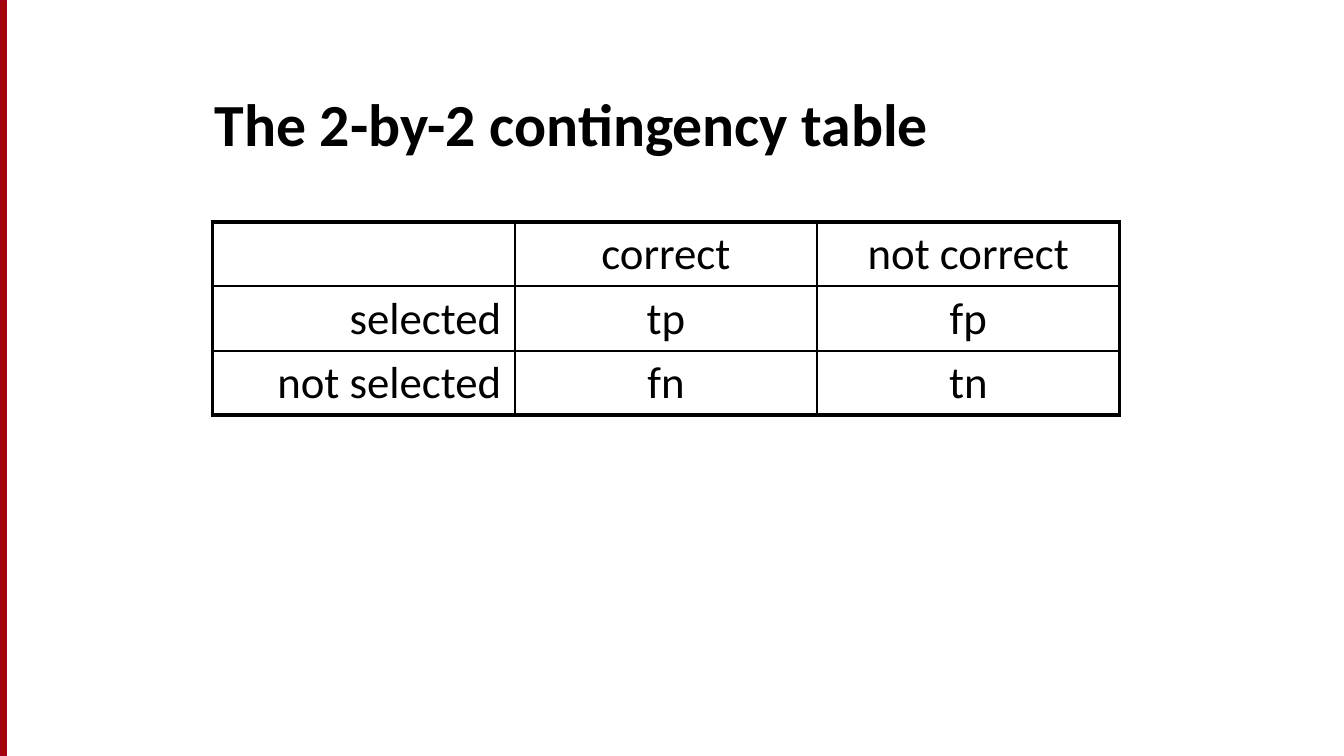
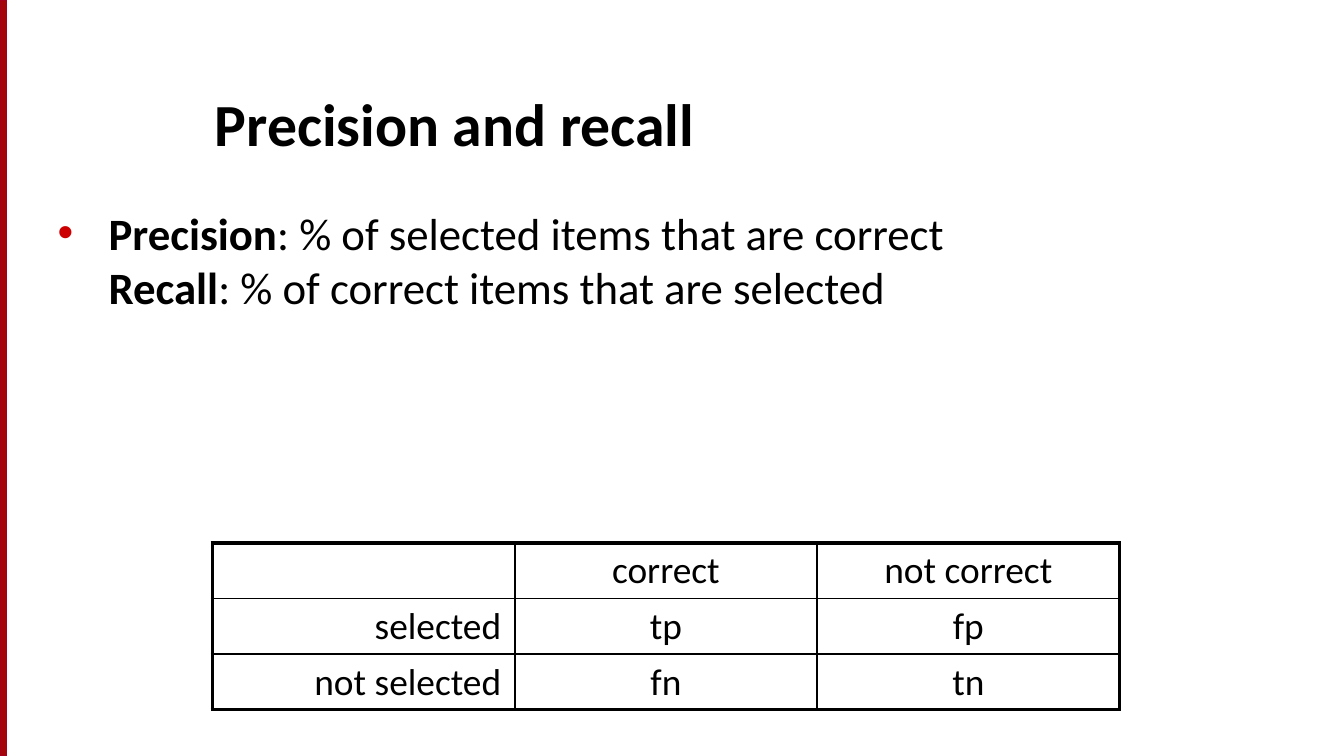
from dataclasses import dataclass

from lxml.etree import SubElement
from pptx import Presentation
from pptx.dml.color import RGBColor
from pptx.enum.shapes import MSO_SHAPE as Shape
from pptx.enum.text import MSO_ANCHOR as Anchor, PP_ALIGN as Align
from pptx.oxml.ns import qn
from pptx.util import Inches, Pt


@dataclass(frozen=True)
class Theme:
    font: str = "Calibri"
    text: str = "000000"
    paper: str = "FFFFFF"
    band: str = "A40508"
    band_line: str = "A4001D"
    bullet: str = "CC0000"
    title_size: int = 32
    body_size: int = 24
    small_size: int = 20
    outer_border: float = 2.25
    inner_border: float = 1


THEME = Theme()
WIDTH = 10
HEIGHT = WIDTH * 9 / 16
BAND_WIDTH = 0.05
CONTINGENCY = [
    ["", "correct", "not correct"],
    ["selected", "tp", "fp"],
    ["not selected", "fn", "tn"],
]
DEFINITIONS = [
    ("Precision", ": % of selected items that are correct"),
    ("Recall", ": % of correct items that are selected"),
]


def color(value):
    return RGBColor.from_string(value)


def write(para, text, size=THEME.body_size, bold=False, align=None):
    if align is not None:
        para.alignment = align
    span = para.add_run()
    span.text = text
    span.font.name = THEME.font
    span.font.size = Pt(size)
    span.font.bold = bold
    span.font.color.rgb = color(THEME.text)


def add_text_frame(page, left, top, width, height, anchor=Anchor.TOP):
    box = page.shapes.add_textbox(*map(Inches, (left, top, width, height)))
    frame = box.text_frame
    frame.word_wrap = True
    frame.vertical_anchor = anchor
    return frame


def add_band(page):
    left = (BAND_WIDTH - HEIGHT) / 2
    top = (HEIGHT - BAND_WIDTH) / 2
    band = page.shapes.add_shape(
        Shape.RECTANGLE, *map(Inches, (left, top, HEIGHT, BAND_WIDTH)))
    band.rotation = 90
    band.shadow.inherit = False
    band.fill.solid()
    band.fill.fore_color.rgb = color(THEME.band)
    band.line.color.rgb = color(THEME.band_line)
    band.line.width = Pt(0.75)


def add_page(deck, title):
    page = deck.slides.add_slide(deck.slide_layouts[6])
    page.background.fill.solid()
    page.background.fill.fore_color.rgb = color(THEME.paper)
    add_band(page)
    frame = add_text_frame(page, 1.5, 0.42, 8.17, 0.81, Anchor.BOTTOM)
    write(frame.paragraphs[0], title, size=THEME.title_size, bold=True)
    return page


def set_bullet(para, indent):
    properties = para._p.get_or_add_pPr()
    properties.set("marL", str(Inches(indent)))
    properties.set("indent", str(-Inches(indent)))
    bullet_color = SubElement(properties, qn("a:buClr"))
    SubElement(bullet_color, qn("a:srgbClr"), val=THEME.bullet)
    SubElement(properties, qn("a:buFont"), typeface="Arial")
    SubElement(properties, qn("a:buChar"), char="•")


def add_definitions(page, definitions):
    para = add_text_frame(page, 0.33, 1.48, 9.33, 3.65).paragraphs[0]
    para.space_before = Pt(2)
    set_bullet(para, 0.38)
    for index, (term, meaning) in enumerate(definitions):
        if index:
            para.add_line_break()
        write(para, term, bold=True)
        write(para, meaning)


def set_borders(cell, outer_sides):
    properties = cell._tc.get_or_add_tcPr()
    for side, is_outer in outer_sides.items():
        width = THEME.outer_border if is_outer else THEME.inner_border
        line = SubElement(properties, qn(f"a:ln{side}"), w=str(Pt(width)))
        fill = SubElement(line, qn("a:solidFill"))
        SubElement(fill, qn("a:srgbClr"), val=THEME.text)


def add_table(page, rows, top, row_height, size):
    last_row, last_column = len(rows) - 1, len(rows[0]) - 1
    frame = page.shapes.add_table(
        len(rows), len(rows[0]), Inches(1.58), Inches(top),
        Inches(6.75), Inches(row_height * len(rows)))
    table = frame.table
    table.first_row = table.horz_banding = False
    for row, texts in enumerate(rows):
        for column, text in enumerate(texts):
            cell = table.cell(row, column)
            cell.margin_left = cell.margin_right = Inches(0.1)
            cell.margin_top = cell.margin_bottom = Inches(0.04)
            set_borders(cell, {"L": column == 0, "R": column == last_column,
                               "T": row == 0, "B": row == last_row})
            cell.fill.background()
            if text:
                align = Align.CENTER if column else Align.RIGHT
                write(cell.text_frame.paragraphs[0], text, size=size, align=align)


def main():
    deck = Presentation()
    deck.slide_width, deck.slide_height = Inches(WIDTH), Inches(HEIGHT)

    page = add_page(deck, "The 2-by-2 contingency table")
    add_table(page, CONTINGENCY, top=1.65, row_height=0.48, size=THEME.body_size)

    page = add_page(deck, "Precision and recall")
    add_definitions(page, DEFINITIONS)
    add_table(page, CONTINGENCY, top=4.04, row_height=0.41, size=THEME.small_size)

    deck.save("out.pptx")


if __name__ == "__main__":
    main()
